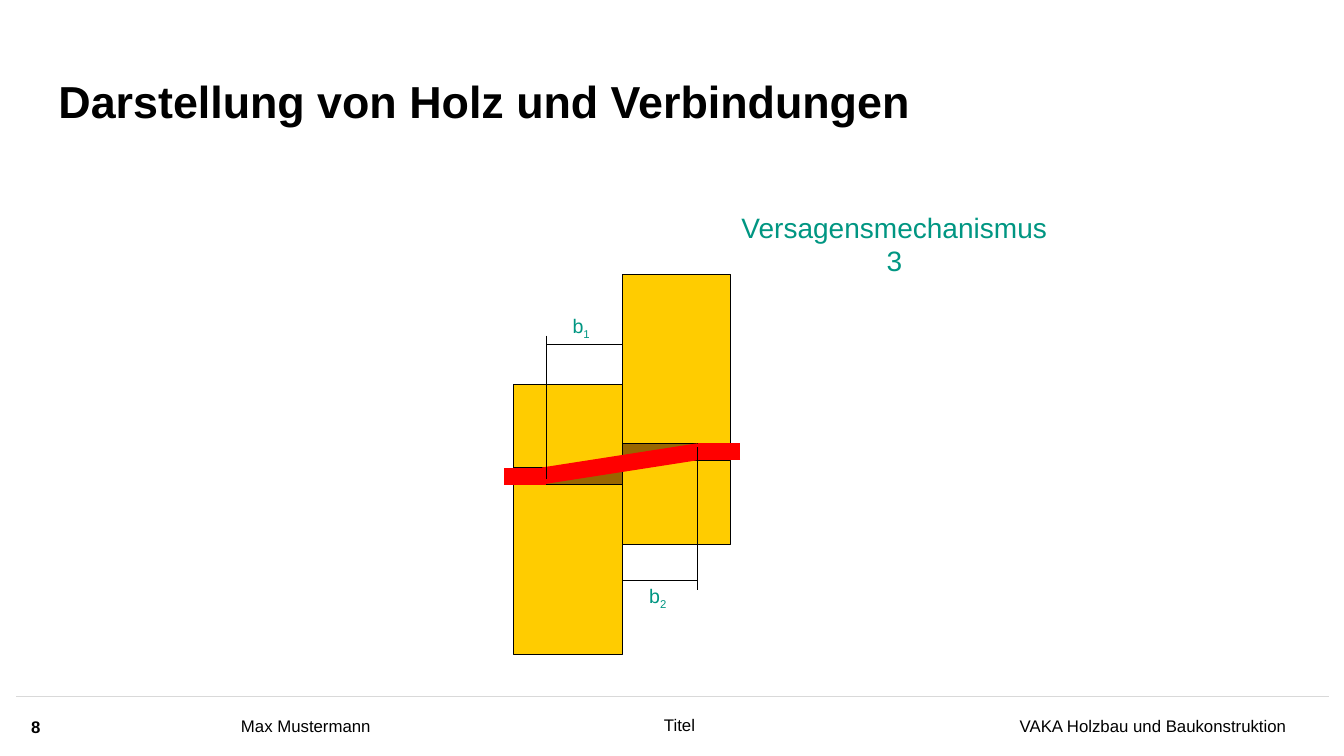
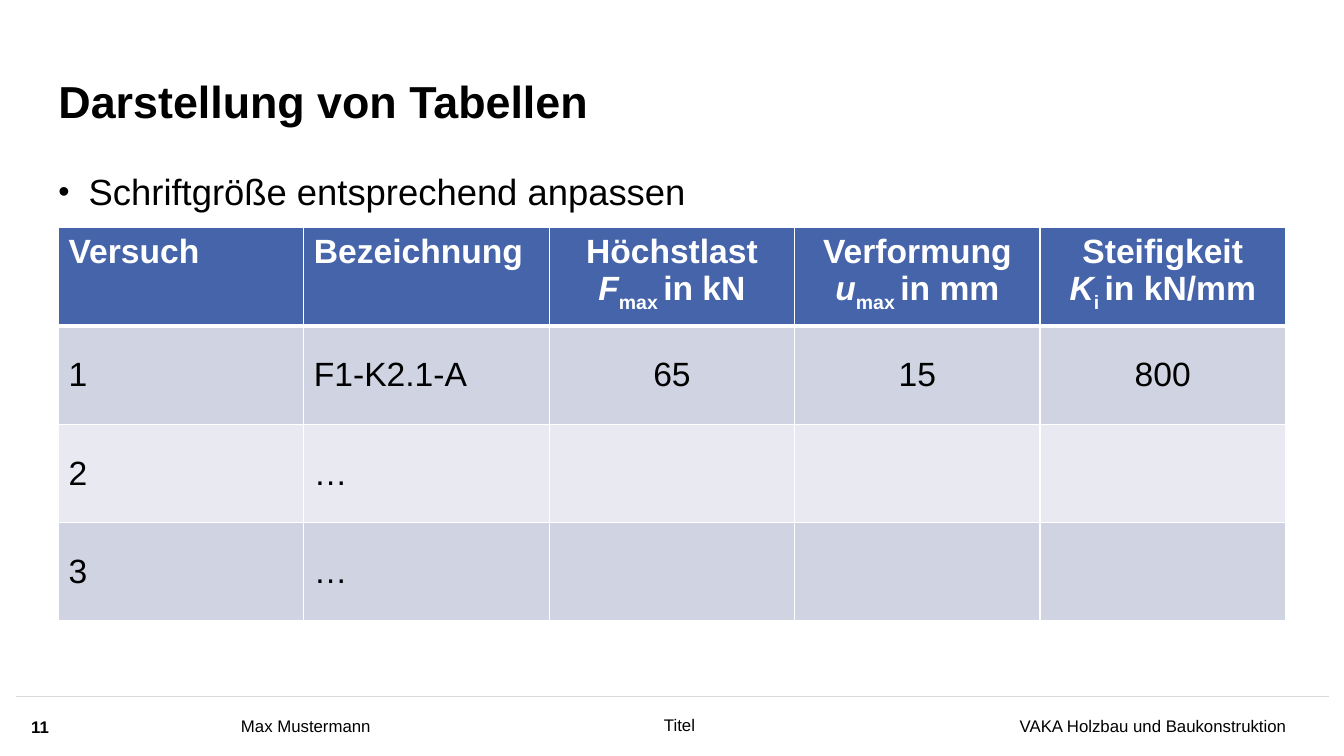
from pptx import Presentation
from pptx.dml.color import RGBColor
from pptx.enum.shapes import MSO_CONNECTOR, MSO_SHAPE
from pptx.enum.text import MSO_ANCHOR, PP_ALIGN
from pptx.oxml.ns import qn
from pptx.util import Inches, Pt
from lxml.etree import SubElement

FONT = "Arial"
BLACK, WHITE, RULE_GREY = "000000", "FFFFFF", "D9D9D9"
TEAL, HEADER_BLUE = "009682", "4664AA"
BANDS = ("CFD3E2", "E9EAF1")
TIMBER, SLOT, DOWEL = "FFCC00", "996600", "FF0000"
MARGIN = 0.58
JOINT_X, JOINT_Y, DIMENSION_Y = 6.17, 4.605, 4.59


def color(value):
    return RGBColor.from_string(value)


def add_run(paragraph, text, size, ink=BLACK, bold=False, mark=None):
    run = paragraph.add_run()
    run.text = text
    font = run.font
    font.name, font.size, font.bold = FONT, Pt(size), bold
    font.color.rgb = color(ink)
    if mark == "italic":
        font.italic = True
    elif mark == "sub":
        run._r.get_or_add_rPr().set("baseline", "-25000")


def format_frame(frame, anchor, inset):
    frame.word_wrap = True
    frame.vertical_anchor = anchor
    if not inset:
        frame.margin_left = frame.margin_right = 0
        frame.margin_top = frame.margin_bottom = 0


def add_text(slide, box, runs, size, ink=BLACK, bold=False,
             align=PP_ALIGN.LEFT, anchor=MSO_ANCHOR.MIDDLE, inset=False):
    frame = slide.shapes.add_textbox(*map(Inches, box)).text_frame
    format_frame(frame, anchor, inset)
    paragraph = frame.paragraphs[0]
    paragraph.alignment = align
    for text, mark in runs:
        add_run(paragraph, text, size, ink, bold, mark)
    return paragraph


def add_line(slide, start, end, ink=BLACK, width=0.75):
    line = slide.shapes.add_connector(
        MSO_CONNECTOR.STRAIGHT, *map(Inches, (*start, *end)))
    line.line.color.rgb = color(ink)
    line.line.width = Pt(width)
    SubElement(line._element.spPr, qn("a:effectLst"))


def add_block(slide, corner, opposite, fill):
    left, right = sorted((corner[0], opposite[0]))
    top, bottom = sorted((corner[1], opposite[1]))
    block = slide.shapes.add_shape(
        MSO_SHAPE.RECTANGLE,
        *map(Inches, (left, top, right - left, bottom - top)))
    block.shadow.inherit = False
    block.fill.solid()
    block.fill.fore_color.rgb = color(fill)
    block.line.color.rgb = color(BLACK)
    block.line.width = Pt(0.75)


def add_base_slide(deck, heading, number):
    slide = deck.slides.add_slide(deck.slide_layouts[5])
    add_text(slide, (8.03, 6.91, 4.73, 0.59),
             [("VAKA Holzbau und Baukonstruktion", None)], 12,
             align=PP_ALIGN.RIGHT)
    add_line(slide, (0.16, 6.91), (13.18, 6.91), RULE_GREY, 1)
    add_text(slide, (2.39, 6.91, 2.02, 0.59), [("Max Mustermann", None)], 12)
    add_text(slide, (4.41, 6.9, 4.66, 0.59), [("Titel", None)], 12,
             align=PP_ALIGN.CENTER)
    add_text(slide, (0.31, 6.92, 0.48, 0.58), [(number, None)], 12, bold=True)

    title = slide.shapes.title
    title.left, title.top = Inches(MARGIN), Inches(0.43)
    title.width, title.height = Inches(10.02), Inches(0.84)
    format_frame(title.text_frame, MSO_ANCHOR.BOTTOM, False)
    paragraph = title.text_frame.paragraphs[0]
    paragraph.alignment = PP_ALIGN.LEFT
    paragraph.line_spacing = 0.9
    add_run(paragraph, heading, 32, bold=True)
    return slide


def turn(point, center_y, turned):
    x, y = point
    return (2 * JOINT_X - x, 2 * center_y - y) if turned else point


def add_timber_half(slide, turned):
    def place(x, y):
        return turn((x, y), JOINT_Y, turned)

    add_block(slide, place(5.09, 3.81), place(JOINT_X, 6.49), TIMBER)
    add_block(slide, place(5.09, 4.64), place(JOINT_X, 4.81), SLOT)
    add_line(slide, place(5, 4.73), place(5.42, 4.73), DOWEL, 12)


def add_dimension(slide, index, turned):
    def place(x, y):
        return turn((x, y), DIMENSION_Y, turned)

    label_x, label_y = place(5.79, 3.25)
    add_text(slide, (label_x - 0.21, label_y - 0.17, 0.42, 0.33),
             [("b", None), (index, "sub")], 14, TEAL, inset=True)
    add_line(slide, place(5.42, 3.42), place(JOINT_X, 3.42))
    add_line(slide, place(5.42, 3.33), place(5.42, 4.75))


def build_joint_slide(deck):
    slide = add_base_slide(deck, "Darstellung von Holz und Verbindungen", "8")
    caption = add_text(slide, (7.08, 1.92, 3.58, 1),
                       [("Versagensmechanismus", None)], 20, TEAL,
                       align=PP_ALIGN.CENTER, inset=True)
    caption.add_line_break()
    add_run(caption, "3", 20, TEAL)
    for turned in (False, True):
        add_timber_half(slide, turned)
    add_line(slide, (5.39, 4.72), (6.93, 4.48), DOWEL, 12)
    for index, turned in (("1", False), ("2", True)):
        add_dimension(slide, index, turned)


def add_border(cell, side, width):
    border = SubElement(cell._tc.get_or_add_tcPr(), qn(f"a:ln{side}"),
                        w=str(Pt(width)))
    fill = SubElement(border, qn("a:solidFill"))
    SubElement(fill, qn("a:srgbClr"), val=WHITE)


def fill_cell(cell, lines, row, column):
    header = row == 0
    for side in "LRTB":
        thick = (header and side == "B") or (row == 1 and side == "T")
        add_border(cell, side, 3 if thick else 1)
    cell.fill.solid()
    cell.fill.fore_color.rgb = color(
        HEADER_BLUE if header else BANDS[(row - 1) % 2])
    cell.vertical_anchor = MSO_ANCHOR.TOP if header else MSO_ANCHOR.MIDDLE
    frame = cell.text_frame
    for position, runs in enumerate(lines):
        paragraph = frame.add_paragraph() if position else frame.paragraphs[0]
        paragraph.alignment = PP_ALIGN.CENTER if column > 1 else PP_ALIGN.LEFT
        for text, mark in runs:
            add_run(paragraph, text, 24, WHITE if header else BLACK,
                    header, mark)


def plain(text):
    return [[(text, None)]] if text else []


def quantity(name, symbol, index, unit):
    return [[(name, None)],
            [(symbol, "italic"), (f"{index} ", "sub"), (f"in {unit}", None)]]


def add_data_table(slide, rows):
    table = slide.shapes.add_table(
        len(rows), len(rows[0]),
        *map(Inches, (MARGIN, 2.26, 12.17, 3.9))).table
    table.horz_banding = False
    for row, cells in enumerate(rows):
        for column, lines in enumerate(cells):
            fill_cell(table.cell(row, column), lines, row, column)


def add_bullet(paragraph):
    properties = paragraph._p.get_or_add_pPr()
    properties.set("marL", str(Inches(0.3)))
    properties.set("indent", str(Inches(-0.3)))
    SubElement(properties, qn("a:buSzPct"), val="88000")
    SubElement(properties, qn("a:buFont"), typeface=FONT)
    SubElement(properties, qn("a:buChar"), char="•")
    paragraph.line_spacing = 0.9


def build_table_slide(deck):
    slide = add_base_slide(deck, "Darstellung von Tabellen", "11")
    hint = add_text(slide, (MARGIN, 1.73, 12.17, 0.5),
                    [("Schriftgröße entsprechend anpassen", None)], 26,
                    anchor=MSO_ANCHOR.TOP)
    add_bullet(hint)
    header = [plain("Versuch"), plain("Bezeichnung"),
              quantity("Höchstlast", "F", "max", "kN"),
              quantity("Verformung", "u", "max", "mm"),
              quantity("Steifigkeit", "K", "i", "kN/mm")]
    trials = [("1", "F1-K2.1-A", "65", "15", "800"),
              ("2", "…", "", "", ""),
              ("3", "…", "", "", "")]
    add_data_table(slide, [header] + [list(map(plain, t)) for t in trials])


def main():
    deck = Presentation()
    deck.slide_width, deck.slide_height = Inches(13.33), Inches(7.5)
    build_joint_slide(deck)
    build_table_slide(deck)
    deck.save("out.pptx")


if __name__ == "__main__":
    main()
